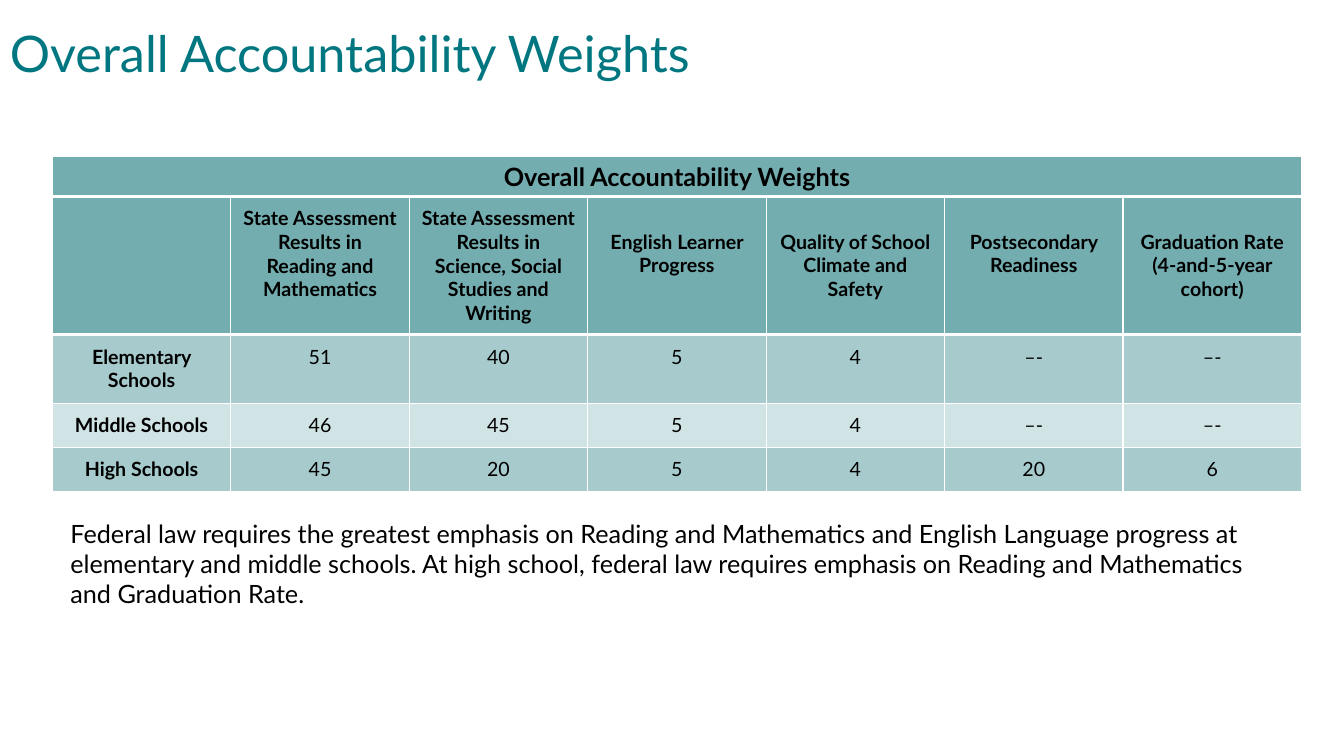
from dataclasses import dataclass

import pptx
import pptx.dml.color
import pptx.enum.text
import pptx.oxml
import pptx.oxml.ns
import pptx.util

Inches = pptx.util.Inches
Pt = pptx.util.Pt
ALIGN = pptx.enum.text.PP_ALIGN
ANCHOR = pptx.enum.text.MSO_ANCHOR


@dataclass(frozen=True)
class Theme:
    font: str = "Lato"
    title: str = "007780"
    ink: str = "000000"
    border: str = "FFFFFF"
    header: str = "74ADB0"
    bands: tuple = ("A7CBCD", "D1E4E5")
    title_size: int = 36
    body_size: int = 18
    cell_size: int = 14
    thin: int = 1
    thick: int = 3


THEME = Theme()
SLIDE_W, SLIDE_H = 13.33, 7.5
TABLE_LEFT, TABLE_W = 0.52, 12.39
BANNER_TOP, BANNER_H = 1.55, 0.4
ROW_HEIGHTS = (1.37, 0.68, 0.44, 0.44)
CELL_INSET = 0.1
LINE_H = 1.2 * THEME.cell_size / 72

HEADING = "Overall Accountability Weights"
MEASURES = (
    "",
    "State Assessment Results in\nReading and Mathematics",
    "State Assessment Results in\nScience, Social Studies and Writing",
    "English Learner Progress",
    "Quality of School Climate and Safety",
    "Postsecondary Readiness",
    "Graduation Rate (4-and-5-year cohort)",
)
WEIGHTS = (
    ("Elementary Schools", "51", "40", "5", "4", "–-", "–-"),
    ("Middle Schools", "46", "45", "5", "4", "–-", "–-"),
    ("High Schools", "45", "20", "5", "4", "20", "6"),
)
NOTE = (
    "Federal law requires the greatest emphasis on Reading and Mathematics and "
    "English Language progress at elementary and middle schools. At high school, "
    "federal law requires emphasis on Reading and Mathematics and Graduation Rate."
)


def rgb(color):
    return pptx.dml.color.RGBColor.from_string(color)


def write(tf, text, size, color=THEME.ink, bold=False, align=ALIGN.LEFT):
    tf.text = text
    tf.word_wrap = True
    for p in tf.paragraphs:
        p.alignment = align
        p.font.size = Pt(size)
        for r in p.runs:
            r.font.name = THEME.font
            r.font.size = Pt(size)
            r.font.bold = bold
            r.font.color.rgb = rgb(color)


def add_text(slide, left, top, width, height, text, size, color=THEME.ink):
    box = slide.shapes.add_textbox(*map(Inches, (left, top, width, height)))
    write(box.text_frame, text, size, color)
    return box.text_frame


def set_borders(cell, bottom):
    """Draw white borders; call before filling, as the schema puts lines first."""
    tc_pr = cell._tc.get_or_add_tcPr()
    ns = pptx.oxml.ns.nsdecls("a")
    widths = {"L": THEME.thin, "R": THEME.thin, "T": THEME.thin, "B": bottom}
    for side, width in widths.items():
        tc_pr.append(pptx.oxml.parse_xml(
            f'<a:ln{side} {ns} w="{Pt(width)}"><a:solidFill>'
            f'<a:srgbClr val="{THEME.border}"/></a:solidFill></a:ln{side}>'
        ))


def style_cell(cell, text, size, fill, bold, bottom=THEME.thin):
    set_borders(cell, bottom)
    cell.fill.solid()
    cell.fill.fore_color.rgb = rgb(fill)
    write(cell.text_frame, text, size, bold=bold, align=ALIGN.CENTER)


def add_grid(slide, top, heights, columns):
    """Add a plain table of equal columns across the table width."""
    frame = slide.shapes.add_table(
        len(heights), columns, Inches(TABLE_LEFT), Inches(top),
        Inches(TABLE_W), Inches(sum(heights)),
    )
    table = frame.table
    table.first_row = table.horz_banding = False
    for row, height in zip(table.rows, heights):
        row.height = Inches(height)
    for column in table.columns:
        column.width = Inches(TABLE_W / columns)
    return table


def add_banner(slide):
    table = add_grid(slide, BANNER_TOP, (BANNER_H,), 1)
    style_cell(table.cell(0, 0), HEADING, THEME.body_size, THEME.header,
               True, THEME.thick)


def add_weights(slide):
    table = add_grid(slide, BANNER_TOP + BANNER_H, ROW_HEIGHTS, len(MEASURES))
    for i, values in enumerate((MEASURES, *WEIGHTS)):
        header = i == 0
        fill = THEME.header if header else THEME.bands[(i - 1) % 2]
        for j, text in enumerate(values):
            cell = table.cell(i, j)
            style_cell(cell, text, THEME.cell_size, fill, header or j == 0,
                       THEME.thick if header else THEME.thin)
            cell.margin_left = cell.margin_right = Inches(CELL_INSET)
            cell.margin_top = cell.margin_bottom = Inches(CELL_INSET)
            if header and "\n" not in text:
                cell.margin_top = Inches(CELL_INSET + LINE_H)


def main():
    prs = pptx.Presentation()
    prs.slide_width, prs.slide_height = Inches(SLIDE_W), Inches(SLIDE_H)
    slide = prs.slides.add_slide(prs.slide_layouts[6])
    tf = add_text(slide, 0, 0, 11.5, 1.11, HEADING, THEME.title_size, THEME.title)
    tf.vertical_anchor = ANCHOR.MIDDLE
    tf.paragraphs[0].line_spacing = 0.9
    add_text(slide, 0.6, 5.09, 12.12, 1.01, NOTE, THEME.body_size)
    add_weights(slide)
    add_banner(slide)
    prs.save("out.pptx")


if __name__ == "__main__":
    main()
